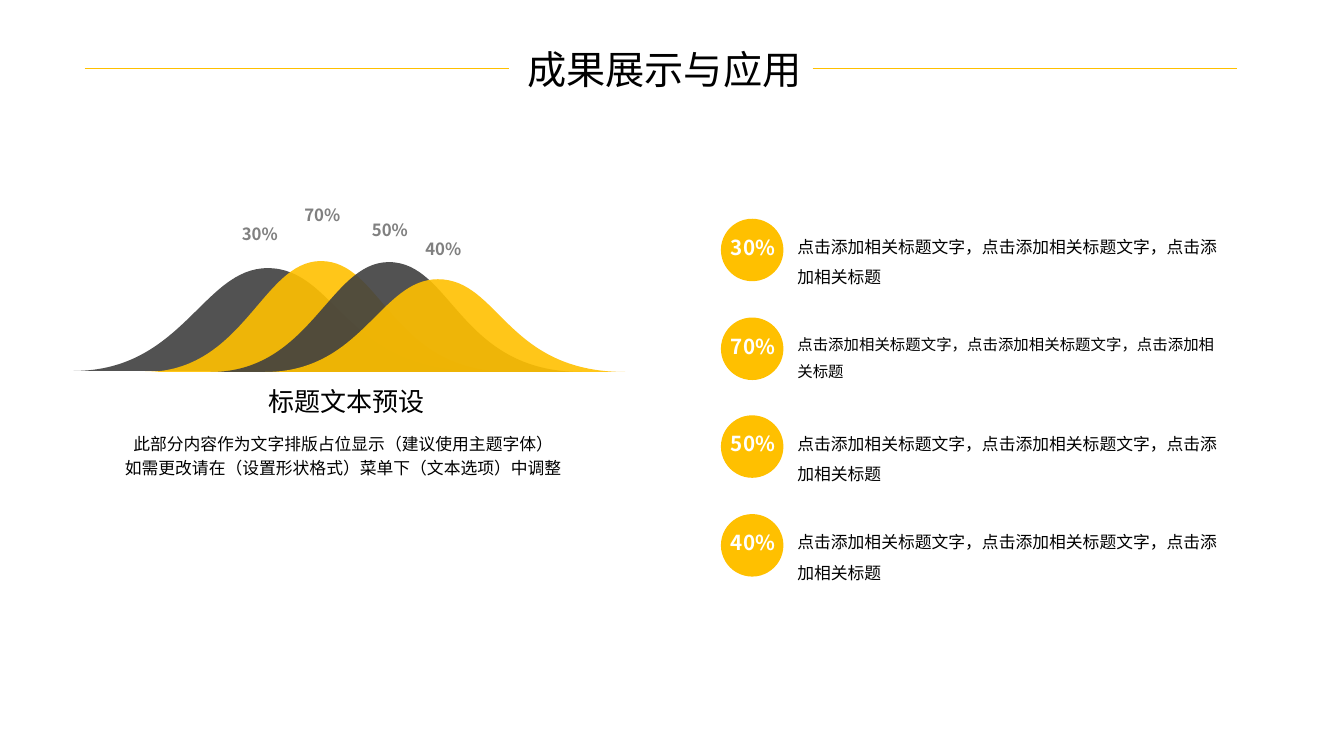
from dataclasses import dataclass

from lxml.etree import SubElement
from pptx import Presentation
from pptx.dml.color import RGBColor
from pptx.enum.shapes import MSO_CONNECTOR as Connector, MSO_SHAPE as Shape
from pptx.enum.text import MSO_AUTO_SIZE as AutoSize, PP_ALIGN as Align
from pptx.oxml.ns import qn
from pptx.slide import Slide
from pptx.util import Inches, Pt

GOLD, GREY, DARK = "FFC000", "808080", "404040"
BLACK, WHITE = "000000", "FFFFFF"
BODY_FONT, TITLE_FONT = "Noto Sans CJK SC", "Noto Sans CJK JP"
ITEM_TEXT = "点击添加相关标题文字，点击添加相关标题文字，点击添加相关标题"
BADGE_LEFT, BADGE_SIZE = 7.15, 0.62
# Shares of a hump's width and rise: start, control, control, peak, control, control, end
HUMP_OUTLINE = [(0, 0), (0.27, 0), (0.32, 1), (0.48, 1), (0.65, 1), (0.67, 0), (1, 0)]


@dataclass
class Item:
    percent: str
    top: float
    size: float = 12
    height: float = 0.69


@dataclass
class Hump:
    percent: str
    left: float
    top: float
    width: float
    base: float
    color: str
    label_left: float
    label_top: float


@dataclass
class Style:
    size: float
    color: str = BLACK
    bold: bool = False
    font: str = BODY_FONT
    align: Align = Align.LEFT
    spacing: float = 1.0
    wrap: bool = True
    side_margin: float = 0.1


ITEMS = [
    Item("30%", 2.17),
    Item("70%", 3.15, size=11),
    Item("50%", 4.12),
    Item("40%", 5.1, height=0.79),
]
HUMPS = [
    Hump("30%", 0.73, 2.66, 4.01, 3.68, DARK, 2.3, 2.17),
    Hump("70%", 1.44, 2.59, 3.63, 3.69, GOLD, 2.92, 1.98),
    Hump("50%", 2.09, 2.6, 3.68, 3.69, DARK, 3.59, 2.13),
    Hump("40%", 2.63, 2.77, 3.57, 3.69, GOLD, 4.12, 2.32),
]


def rgb(color: str) -> RGBColor:
    return RGBColor.from_string(color)


def add_text(page: Slide, text: str, left: float, top: float,
             width: float, height: float, style: Style):
    box = page.shapes.add_textbox(Inches(left), Inches(top), Inches(width), Inches(height))
    frame = box.text_frame
    frame.word_wrap = style.wrap
    frame.margin_left = frame.margin_right = Inches(style.side_margin)
    para = frame.paragraphs[0]
    para.text = text
    para.alignment = style.align
    para.line_spacing = style.spacing
    para.font.size = Pt(style.size)
    para.font.bold = style.bold
    para.font.color.rgb = rgb(style.color)
    para.font.name = style.font
    # Chinese characters take the East Asian typeface
    defaults = para._p.pPr.find(qn("a:defRPr"))
    SubElement(defaults, qn("a:ea")).set("typeface", style.font)
    return box


def paint(shape, color: str) -> None:
    shape.shadow.inherit = False
    shape.fill.solid()
    shape.fill.fore_color.rgb = rgb(color)
    shape.line.fill.background()


def add_hump(page: Slide, hump: Hump) -> None:
    rise = hump.base - hump.top
    points = [(Inches(hump.left + hump.width * across), Inches(hump.base - rise * up))
              for across, up in HUMP_OUTLINE]
    builder = page.shapes.build_freeform(*points[0])
    builder.add_line_segments(points[1:] + points[:1], close=True)
    shape = builder.convert_to_shape()
    paint(shape, hump.color)
    properties = shape._element.spPr

    # Join each three segments of a side into one cubic curve
    segments = list(properties.iter(qn("a:lnTo")))
    for side in (segments[:3], segments[3:6]):
        curve = side[0].makeelement(qn("a:cubicBezTo"))
        side[0].addprevious(curve)
        for segment in side:
            curve.append(segment[0])
            segment.getparent().remove(segment)

    tint = properties.find(qn("a:solidFill"))[0]
    SubElement(tint, qn("a:alpha")).set("val", "90000")


def add_item(page: Slide, item: Item) -> None:
    add_text(page, ITEM_TEXT, 7.81, item.top + 0.03, 4.48, item.height,
             Style(item.size, spacing=1.5))
    badge = page.shapes.add_shape(Shape.OVAL, Inches(BADGE_LEFT), Inches(item.top),
                                  Inches(BADGE_SIZE), Inches(BADGE_SIZE))
    paint(badge, GOLD)


def add_rule(page: Slide, left: float, right: float) -> None:
    rule = page.shapes.add_connector(Connector.STRAIGHT, Inches(left), Inches(0.68),
                                     Inches(right), Inches(0.68))
    rule.line.color.rgb = rgb(GOLD)
    rule.line.width = Pt(0.5)
    SubElement(rule._element.spPr, qn("a:effectLst"))


def main() -> None:
    deck = Presentation()
    deck.slide_width, deck.slide_height = Inches(13.33), Inches(7.5)
    page = deck.slides.add_slide(deck.slide_layouts[6])

    # Percentage list on the right
    for item in ITEMS:
        add_item(page, item)
    for item in ITEMS:
        add_text(page, item.percent, BADGE_LEFT, item.top + 0.11, 0.65, 0.37,
                 Style(14.7, WHITE, bold=True, wrap=False))

    # Caption, overlapping humps and their labels
    add_text(page, "此部分内容作为文字排版占位显示（建议使用主题字体）\n"
                   "如需更改请在（设置形状格式）菜单下（文本选项）中调整",
             0.45, 4.21, 5.91, 0.58, Style(12, align=Align.CENTER, spacing=1.2))
    add_text(page, "标题文本预设", 2.58, 3.78, 1.72, 0.4,
             Style(18.6, align=Align.CENTER, wrap=False, side_margin=0))
    for hump in HUMPS:
        add_hump(page, hump)
    for hump in HUMPS:
        add_text(page, hump.percent, hump.label_left, hump.label_top, 0.58, 0.33,
                 Style(12, GREY, bold=True, wrap=False))

    # Heading between two rules
    heading = add_text(page, "成果展示与应用", 5.05, 0.4, 3.08, 0.57,
                       Style(28, font=TITLE_FONT, align=Align.CENTER))
    heading.text_frame.auto_size = AutoSize.SHAPE_TO_FIT_TEXT
    for left, right in [(0.84, 5.05), (8.06, 12.27)]:
        add_rule(page, left, right)

    deck.save("out.pptx")


if __name__ == "__main__":
    main()
